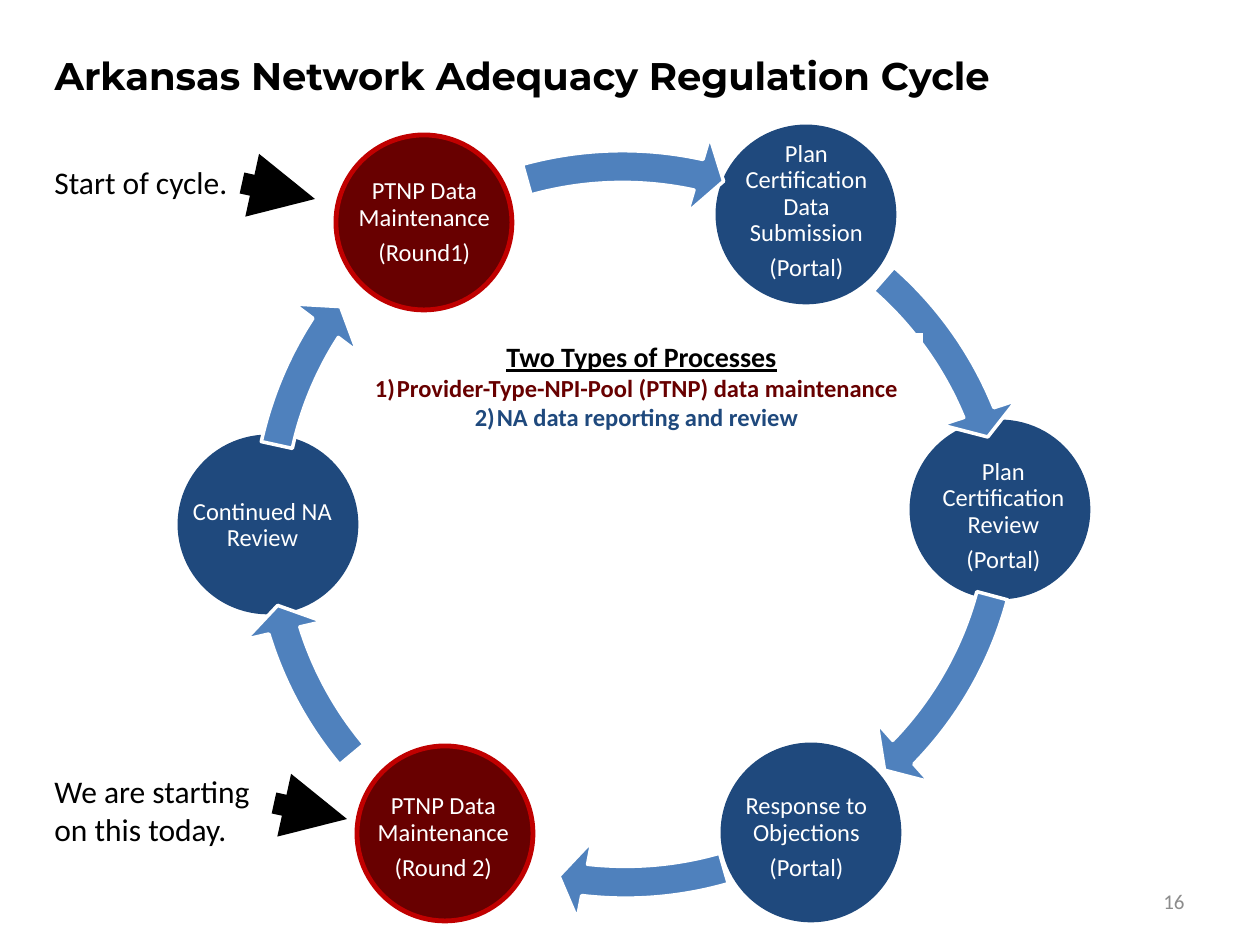
from dataclasses import dataclass

from lxml import etree
from pptx import Presentation
from pptx.dml.color import RGBColor
from pptx.enum.shapes import MSO_CONNECTOR, MSO_SHAPE
from pptx.enum.text import MSO_ANCHOR, MSO_AUTO_SIZE, PP_ALIGN
from pptx.oxml.ns import qn
from pptx.util import Emu, Pt

ELLIPSE, CIRCULAR_ARROW = MSO_SHAPE.OVAL, MSO_SHAPE.CIRCULAR_ARROW
RECTANGLE = MSO_SHAPE.RECTANGLE
STRAIGHT = MSO_CONNECTOR.STRAIGHT
LEFT, CENTER, RIGHT = PP_ALIGN.LEFT, PP_ALIGN.CENTER, PP_ALIGN.RIGHT
TOP, MIDDLE = MSO_ANCHOR.TOP, MSO_ANCHOR.MIDDLE
NO_AUTOFIT = MSO_AUTO_SIZE.NONE

PX_PER_INCH = 126
TITLE_ONLY = 5
CIRCLE_SIZE = (176, 175)
RING = 793
LABEL_HEIGHT = 163
LIST_INDENT = 22


@dataclass(frozen=True)
class Theme:
    black: str = "000000"
    white: str = "FFFFFF"
    navy: str = "1F497D"
    maroon: str = "680000"
    red: str = "C00000"
    blue: str = "4F81BD"
    grey: str = "8C8C8C"
    body_font: str = "Calibri"
    title_font: str = "Montserrat"
    title: int = 22
    note: int = 18
    heading: int = 16
    label: int = 14
    number: int = 12


THEME = Theme()
REVIEW = (THEME.navy, THEME.navy)
MAINTENANCE = (THEME.maroon, THEME.red)

# Circle position, colours, label left, top and width, label paragraphs
STEPS = [
    ((718, 127), REVIEW, (725, 130, 163), ["Plan Certification Data Submission", "(Portal)"]),
    ((912, 422), REVIEW, (922, 435, 163), ["Plan Certification Review", "(Portal)"]),
    ((723, 745), REVIEW, (725, 756, 163), ["Response to Objections", "(Portal)"]),
    ((357, 746), MAINTENANCE, (330, 756, 227), ["PTNP Data Maintenance", "(Round 2)"]),
    ((180, 437), REVIEW, (181, 444, 163), ["Continued NA Review"]),
    ((336, 135), MAINTENANCE, (323, 141, 203), ["PTNP Data Maintenance", "(Round1)"]),
]

# Ring position, end angle and start angle of each arrow
CYCLE_ARROWS = [
    ((252, 151), 202.68, 186.75),
    ((251, 107), 26.52, 8.99),
    ((229, 129), 57.94, 44.39),
    ((229, 129), 97.73, 84.04),
    ((229, 125), 127.71, 115.42),
    ((226, 127), 169.38, 152.67),
]

# Note text, its box, pointer start and end
NOTES = [
    ("Start of cycle.", (42, 157, 199, 51), (242, 183), (315, 199)),
    ("We are starting on this today.", (42, 766, 232, 89), (274, 803), (347, 819)),
]


def px(*lengths):
    return [Emu(round(length * 914400 / PX_PER_INCH)) for length in lengths]


def apply(target, values):
    for name, value in values.items():
        setattr(target, name, value)


def style_font(font, size, color, name=THEME.body_font, **values):
    apply(font, {"size": Pt(size), "name": name, **values})
    font.color.rgb = RGBColor.from_string(color)


def add_filled(slide, preset, box, fill, line=None, width=0):
    shape = slide.shapes.add_shape(preset, *px(*box))
    shape.shadow.inherit = False
    shape.fill.solid()
    shape.fill.fore_color.rgb = RGBColor.from_string(fill)
    if line:
        shape.line.color.rgb = RGBColor.from_string(line)
        shape.line.width = Pt(width)
    else:
        shape.line.fill.background()
    return shape


def add_text(slide, box, paragraphs, size, color, align=LEFT, spacing=None, **frame_format):
    frame = slide.shapes.add_textbox(*px(*box)).text_frame
    apply(frame, {"word_wrap": True, **frame_format})
    frame.text = "\n".join(paragraphs)
    for paragraph in frame.paragraphs:
        apply(paragraph, {"alignment": align, **(spacing or {})})
        style_font(paragraph.runs[0].font, size, color)


def add_step_label(slide, place, paragraphs):
    inset = dict.fromkeys(
        ("margin_left", "margin_top", "margin_right", "margin_bottom"), px(2)[0])
    add_text(slide, (*place, LABEL_HEIGHT), paragraphs, THEME.label, THEME.white, CENTER,
             {"line_spacing": 0.9, "space_after": Pt(5)}, vertical_anchor=MIDDLE, **inset)


def add_cycle_arrow(slide, place, end, start):
    arrow = add_filled(slide, CIRCULAR_ARROW, (*place, RING, RING), THEME.blue, THEME.white, 2)
    for index, value in enumerate((0.04, 2.5, end, start, 0.05)):
        arrow.adjustments[index] = value


def add_pointer(slide, start, end):
    pointer = slide.shapes.add_connector(STRAIGHT, *px(*start, *end))
    pointer.line.color.rgb = RGBColor.from_string(THEME.black)
    pointer.line.width = Pt(12.25)
    etree.SubElement(pointer.line._get_or_add_ln(), qn("a:tailEnd"), type="triangle")
    etree.SubElement(pointer._element.spPr, qn("a:effectLst"))


def number_paragraph(paragraph):
    """Give the paragraph a hanging 1) 2) number."""
    properties = paragraph._p.get_or_add_pPr()
    indent, right = px(LIST_INDENT, 10)
    apply_to = {"marL": indent, "marR": right, "indent": -indent}
    for name, value in apply_to.items():
        properties.set(name, str(int(value)))
    etree.SubElement(properties, qn("a:buFont"), typeface="+mj-lt")
    etree.SubElement(properties, qn("a:buAutoNum"), type="arabicParenR")


def add_process_types(slide):
    frame = add_filled(slide, RECTANGLE, (360, 333, 563, 106), THEME.white).text_frame
    apply(frame, {"word_wrap": True, "vertical_anchor": TOP})
    lines = [
        ("Two Types of Processes", THEME.heading, THEME.black),
        ("Provider-Type-NPI-Pool (PTNP) data maintenance", THEME.label, THEME.maroon),
        ("NA data reporting and review", THEME.label, THEME.navy),
    ]
    frame.text = "\n".join(text for text, _, _ in lines)
    for index, (paragraph, (_, size, color)) in enumerate(zip(frame.paragraphs, lines)):
        paragraph.alignment = CENTER
        if index:
            number_paragraph(paragraph)
        style_font(paragraph.runs[0].font, size, color, bold=True, underline=index == 0)


def set_title(slide, text):
    title = slide.shapes.title
    apply(title, dict(zip(("left", "top", "width", "height"), px(42, 24, 1134, 158))))
    frame = title.text_frame
    frame.text = text
    apply(frame, {"auto_size": NO_AUTOFIT, "vertical_anchor": TOP, "margin_top": px(28)[0]})
    frame.paragraphs[0].alignment = LEFT
    style_font(frame.paragraphs[0].runs[0].font, THEME.title, THEME.black,
               THEME.title_font, bold=True)


def main():
    prs = Presentation()
    prs.slide_width, prs.slide_height = px(1260, 945)
    slide = prs.slides.add_slide(prs.slide_layouts[TITLE_ONLY])
    set_title(slide, "Arkansas Network Adequacy Regulation Cycle")
    for place, (fill, line), _, _ in STEPS:
        add_filled(slide, ELLIPSE, (*place, *CIRCLE_SIZE), fill, line, 2.75)
    for (_, _, place, paragraphs), arrow in zip(STEPS, CYCLE_ARROWS):
        add_step_label(slide, place, paragraphs)
        add_cycle_arrow(slide, *arrow)
    add_text(slide, (903, 876, 294, 50), ["16"], THEME.number, THEME.grey, RIGHT,
             vertical_anchor=MIDDLE)
    add_process_types(slide)
    for text, box, start, end in NOTES:
        add_text(slide, box, [text], THEME.note, THEME.black)
        add_pointer(slide, start, end)
    prs.save("out.pptx")


if __name__ == "__main__":
    main()
